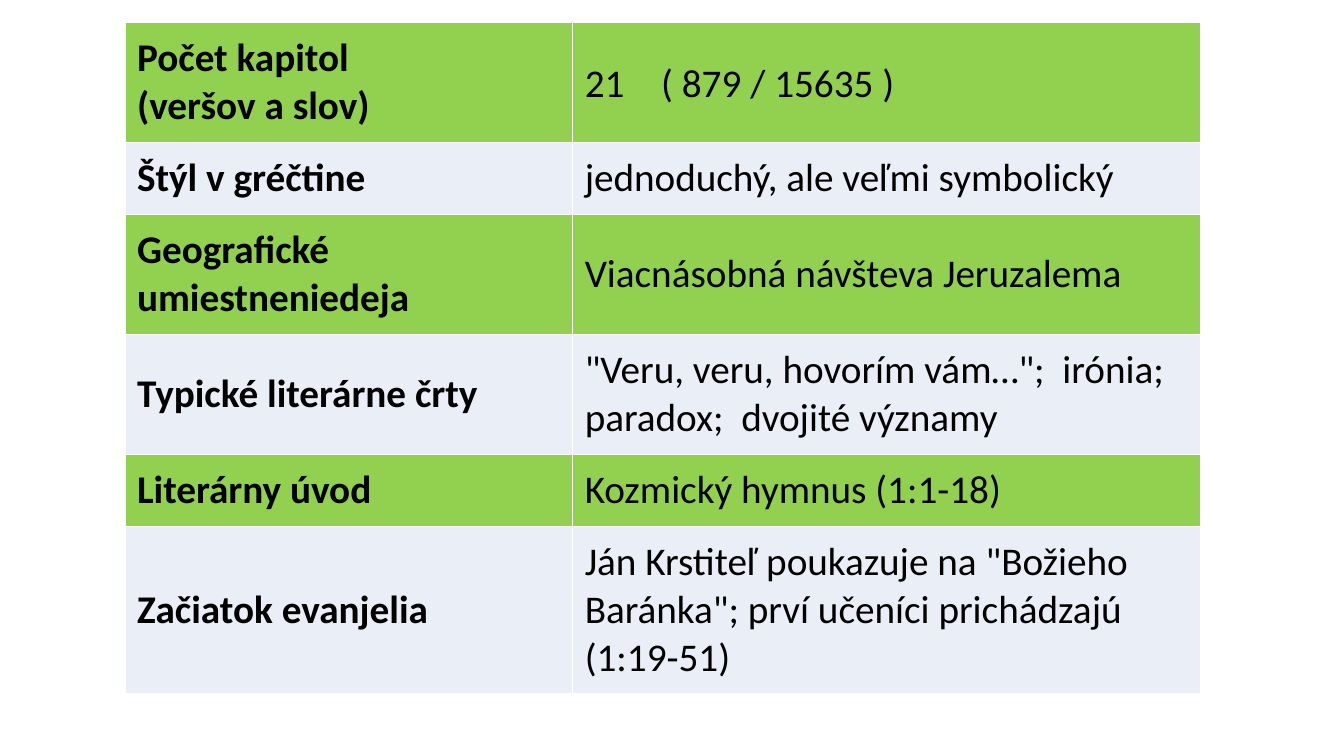
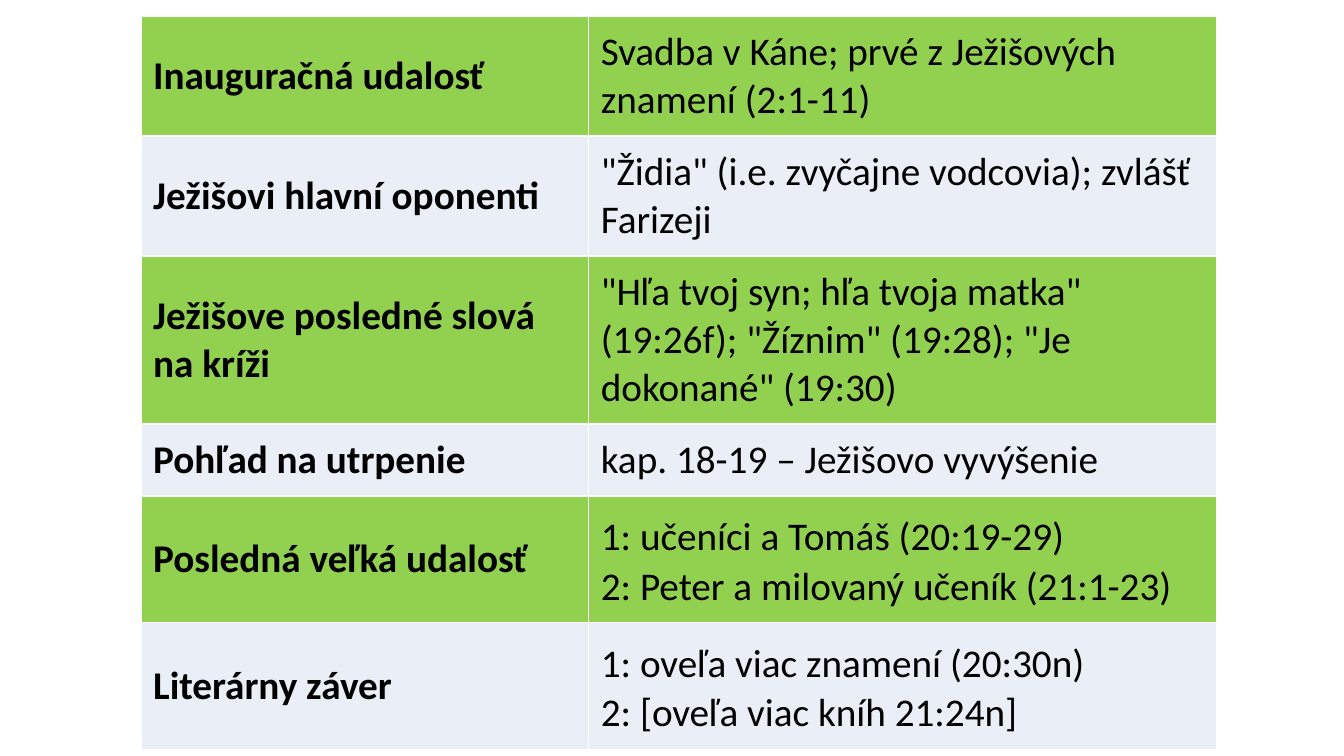
import pptx
import pptx.util
import pptx.dml.color
import pptx.enum.text
import pptx.oxml
import pptx.oxml.ns
import lxml.etree

Inches = pptx.util.Inches
Pt = pptx.util.Pt

COLORS = {"green": "92D050", "pale": "EAEFF7", "text": "000000", "border": "FFFFFF"}
FONT = "Calibri"
TEXT_SIZE = 28
SPACE_SIZE = 32
COLUMN_WIDTHS = (4.44, 6.23)
CELL_MARGIN = 0.12
LINE_HEIGHT = 0.47
BREAK = "\n"
LARGE_SPACE = " "

# Each cell is a list of paragraphs, each paragraph a list of runs.
# Each row is its number of text lines, its label and its value.
TABLES = [
    {
        "left": 1.24, "top": 0.22,
        "rows": [
            (2, [["Počet kapitol "], ["(veršov a slov)"]],
             [["21", LARGE_SPACE, "   ( 879 / 15635 )"]]),
            (1, [["Štýl v gréčtine"]], [["jednoduchý, ale veľmi symbolický"]]),
            (2, [["Geografické umiestneniedeja"]], [["Viacnásobná návšteva Jeruzalema"]]),
            (2, [["Typické literárne črty"]],
             [['"Veru, veru, hovorím vám…";  irónia;  paradox;  dvojité významy']]),
            (1, [["Literárny úvod"]], [["Kozmický hymnus (1:1-18)"]]),
            (3, [["Začiatok evanjelia"]],
             [['Ján Krstiteľ poukazuje na "Božieho Baránka"; prví učeníci prichádzajú (1:19-51)']]),
        ],
    },
    {
        "left": 1.4, "top": 0.16,
        "rows": [
            (2, [["Inauguračná udalosť"]],
             [["Svadba v Káne; prvé z Ježišových znamení (2:1-11)"]]),
            (2, [["Ježišovi hlavní oponenti"]],
             [['"Židia" (i.e. zvyčajne vodcovia); zvlášť Farizeji']]),
            (3, [["Ježišove posledné slová na kríži"]],
             [['"Hľa tvoj syn; hľa tvoja matka" (19:26f); "Žíznim" (19:28); "Je dokonané" (19:30)']]),
            (1, [["Pohľad na utrpenie "]], [["kap. 18-19 – Ježišovo vyvýšenie"]]),
            (2, [["Posledná veľká udalosť"]],
             [["1: učeníci a Tomáš (20:19-29)", LARGE_SPACE, BREAK,
               "2: Peter a milovaný učeník (21:1-23)"]]),
            (2, [["Literárny záver"]],
             [["1: oveľa viac znamení (20:30n)", LARGE_SPACE, BREAK,
               "2: [oveľa viac kníh 21:24n]"]]),
        ],
    },
]


def format_cell(cell, fill_color):
    """Set the borders, fill, margins and anchor of a cell."""
    properties = cell._tc.get_or_add_tcPr()
    for side in ("a:lnL", "a:lnR", "a:lnT", "a:lnB"):
        line = lxml.etree.SubElement(properties, pptx.oxml.ns.qn(side), w=str(Pt(1)))
        solid = lxml.etree.SubElement(line, pptx.oxml.ns.qn("a:solidFill"))
        lxml.etree.SubElement(solid, pptx.oxml.ns.qn("a:srgbClr"), val=COLORS["border"])
    cell.fill.solid()
    cell.fill.fore_color.rgb = pptx.dml.color.RGBColor.from_string(COLORS[fill_color])
    cell.margin_left = cell.margin_right = Inches(CELL_MARGIN)
    cell.margin_top = cell.margin_bottom = Inches(CELL_MARGIN)
    cell.vertical_anchor = pptx.enum.text.MSO_ANCHOR.MIDDLE


def write_cell(cell, paragraphs, bold):
    """Write the paragraphs of a cell run by run."""
    for index, pieces in enumerate(paragraphs):
        frame = cell.text_frame
        paragraph = frame.add_paragraph() if index else frame.paragraphs[0]
        for piece in pieces:
            if piece == BREAK:
                paragraph.add_line_break()
                continue
            run = paragraph.add_run()
            run.text = piece
            run.font.name = FONT
            run.font.size = Pt(SPACE_SIZE if piece == LARGE_SPACE else TEXT_SIZE)
            run.font.bold = bold
            run.font.color.rgb = pptx.dml.color.RGBColor.from_string(COLORS["text"])


presentation = pptx.Presentation()
presentation.slide_width = Inches(13.33)
presentation.slide_height = Inches(7.5)
blank_layout = presentation.slide_layouts[6]

# One table on each slide
for content in TABLES:
    slide = presentation.slides.add_slide(blank_layout)
    rows = content["rows"]
    heights = [2 * CELL_MARGIN + lines * LINE_HEIGHT for lines, label, value in rows]
    shape = slide.shapes.add_table(
        len(rows), len(COLUMN_WIDTHS), Inches(content["left"]), Inches(content["top"]),
        Inches(sum(COLUMN_WIDTHS)), Inches(sum(heights)))
    table = shape.table
    table.first_row = False
    table.horz_banding = False
    for column, width in zip(table.columns, COLUMN_WIDTHS):
        column.width = Inches(width)

    # Rows alternate between green and pale, with bold labels
    for row_index, (lines, label, value) in enumerate(rows):
        table.rows[row_index].height = Inches(heights[row_index])
        fill_color = "pale" if row_index % 2 else "green"
        for column_index, paragraphs in enumerate((label, value)):
            cell = table.cell(row_index, column_index)
            format_cell(cell, fill_color)
            write_cell(cell, paragraphs, bold=column_index == 0)

presentation.save("out.pptx")
